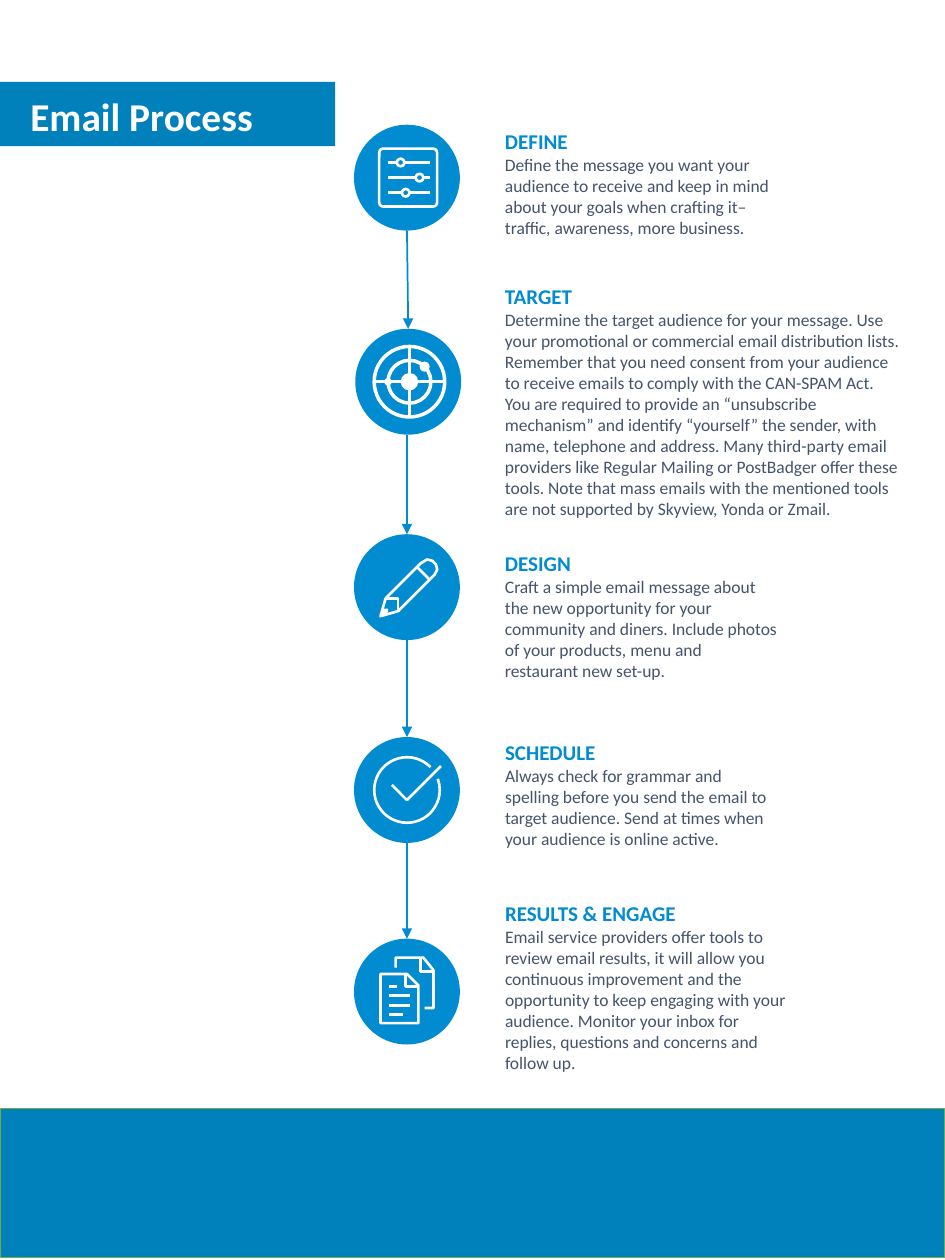
"""Build a one-page email process infographic with five linked steps."""
import pptx
import pptx.dml.color
import pptx.enum.shapes
import pptx.enum.text
import pptx.oxml
import pptx.oxml.ns
import pptx.util

Inches = pptx.util.Inches
Pt = pptx.util.Pt
SHAPES = pptx.enum.shapes.MSO_SHAPE
FONT = "Calibri"
BAND, BLUE, WHITE, SLATE, GREEN = "0081BC", "018BD1", "FFFFFF", "44546A", "70AD47"
DIAMETER = 0.84
CENTER_X = 3.23
TEXT_LEFT = 3.91

STEPS = [
    {"center": (CENTER_X, 1.41), "box": (0.97, 2.44, 0.98), "icon": "sliders", "heading": "DEFINE",
     "body": "Define the message you want your audience to receive and keep in mind about your goals "
             "when crafting it– traffic, awareness, more business."},
    {"center": (3.24, 3.03), "box": (2.2, 3.34, 1.99), "icon": "radar", "heading": "TARGET",
     "body": "Determine the target audience for your message. Use your promotional or commercial email "
             "distribution lists. Remember that you need consent from your audience to receive emails to "
             "comply with the CAN-SPAM Act. You are required to provide an “unsubscribe mechanism” and "
             "identify “yourself” the sender, with name, telephone and address. Many third-party email "
             "providers like Regular Mailing or PostBadger offer these tools. Note that mass emails with "
             "the mentioned tools are not supported by Skyview, Yonda or Zmail."},
    {"center": (CENTER_X, 4.66), "box": (4.32, 2.37, 1.14), "icon": "pencil", "heading": "DESIGN",
     "body": "Craft a simple email message about the new opportunity for your community and diners. "
             "Include photos of your products, menu and restaurant new set-up."},
    {"center": (CENTER_X, 6.27), "box": (5.82, 2.35, 0.98), "icon": "check", "heading": "SCHEDULE",
     "body": "Always check for grammar and spelling before you send the email to target audience. "
             "Send at times when your audience is online active."},
    {"center": (CENTER_X, 7.87), "box": (7.1, 2.49, 1.31), "icon": "pages", "heading": "RESULTS & ENGAGE",
     "body": "Email service providers offer tools to review email results, it will allow you continuous "
             "improvement and the opportunity to keep engaging with your audience. Monitor your inbox for "
             "replies, questions and concerns and follow up."},
]

ICONS = {
    "sliders": {
        "strokes": [[(-0.15, y), (0.18, y)] for y in (-0.12, 0, 0.12)],
        "rounds": [("frame", (0.01, 0), 0.23), ("knob", (-0.05, -0.12), 0.03),
                   ("knob", (0.1, 0), 0.03), ("knob", (-0.01, 0.12), 0.03)]},
    "radar": {
        "strokes": [[(-0.27, 0), (0.29, 0)], [(0.01, -0.28), (0.01, 0.28)]],
        "rounds": [("ring", (0.01, 0), 0.28), ("ring", (0.01, 0), 0.17), ("dot", (0.01, 0), 0.07),
                   ("dot", (0.13, -0.12), 0.04), ("dot", (-0.16, 0), 0.03)]},
    "pencil": {
        "strokes": [[(-0.21, 0.23), (-0.17, 0.09), (0.11, -0.19), (0.16, -0.22), (0.2, -0.21),
                     (0.23, -0.18), (0.24, -0.14), (0.22, -0.1), (-0.07, 0.19), (-0.21, 0.23)],
                    [(0.08, -0.16), (0.18, -0.06)],
                    [(-0.17, 0.09), (-0.07, 0.09), (-0.07, 0.19)]],
        "solid": [(-0.22, 0.24), (-0.18, 0.17), (-0.15, 0.17), (-0.15, 0.2), (-0.22, 0.24)]},
    "check": {
        "strokes": [[(-0.12, -0.04), (0, 0.08), (0.27, -0.19)]],
        "rounds": [("dial", (0, 0), 0.26)]},
    "pages": {
        "strokes": [[(-0.21, -0.14), (0, -0.14), (0.09, -0.05), (0.09, 0.25), (-0.21, 0.25), (-0.21, -0.14)],
                    [(-0.01, -0.14), (-0.01, -0.04), (0.08, -0.04)],
                    [(-0.09, -0.19), (-0.09, -0.27), (0.13, -0.27), (0.21, -0.17), (0.21, 0.13), (0.14, 0.13)],
                    [(0.11, -0.26), (0.11, -0.16), (0.2, -0.16)]]
        + [[(-0.14, y), (right, y)]
           for y, right in ((-0.04, -0.08), (0.03, 0.02), (0.11, 0.02), (0.18, -0.03))]},
}
ROUNDS = {
    "frame": (SHAPES.ROUNDED_RECTANGLE, None, WHITE, 1.5, (0.07,)),
    "knob": (SHAPES.OVAL, BLUE, WHITE, 1.5, ()),
    "ring": (SHAPES.OVAL, None, WHITE, 2, ()),
    "dot": (SHAPES.OVAL, WHITE, None, 0, ()),
    "dial": (SHAPES.ARC, None, WHITE, 1.5, (340 * 0.6, 316 * 0.6)),
    "disc": (SHAPES.OVAL, BLUE, None, 0, ()),
}


def color(value):
    return pptx.dml.color.RGBColor.from_string(value)


def style(shape, fill=None, line=None, width=1.5):
    shape.shadow.inherit = False
    if fill:
        shape.fill.solid()
        shape.fill.fore_color.rgb = color(fill)
    else:
        shape.fill.background()
    if line:
        shape.line.color.rgb = color(line)
        shape.line.width = Pt(width)
    else:
        shape.line.fill.background()


def add_round(page, kind, center, radius):
    preset, fill, line, width, adjustments = ROUNDS[kind]
    corner = [Inches(c - radius) for c in center]
    shape = page.shapes.add_shape(preset, *corner, Inches(2 * radius), Inches(2 * radius))
    style(shape, fill, line, width)
    for index, value in enumerate(adjustments):
        shape.adjustments[index] = value


def add_arrow(page, start, end):
    ends = [Inches(v) for v in (*start, *end)]
    arrow = page.shapes.add_connector(pptx.enum.shapes.MSO_CONNECTOR.STRAIGHT, *ends)
    arrow.line.color.rgb = color(BLUE)
    arrow.line.width = Pt(1)
    space = pptx.oxml.ns.nsdecls("a")
    head = pptx.oxml.parse_xml(f'<a:tailEnd {space} type="triangle"/>')
    arrow.line._get_or_add_ln().append(head)
    arrow._element.spPr.append(pptx.oxml.parse_xml(f"<a:effectLst {space}/>"))


def add_outline(page, center, contours, **look):
    placed = [[(Inches(center[0] + x), Inches(center[1] + y)) for x, y in points] for points in contours]
    builder = page.shapes.build_freeform(*placed[0][0])
    for index, points in enumerate(placed):
        if index:
            builder.move_to(*points[0])
        builder.add_line_segments(points[1:], close=contours[index][0] == contours[index][-1])
    style(builder.convert_to_shape(), **look)


def add_icon(page, icon, center):
    add_outline(page, center, icon["strokes"], line=WHITE)
    if "solid" in icon:
        add_outline(page, center, [icon["solid"]], fill=WHITE)
    for kind, (x, y), radius in icon.get("rounds", []):
        add_round(page, kind, (center[0] + x, center[1] + y), radius)


def set_font(para, size, shade, bold):
    para.font.name = FONT
    para.font.size = Pt(size)
    para.font.bold = bold
    para.font.color.rgb = color(shade)


def add_text(page, step):
    top, width, height = step["box"]
    box = page.shapes.add_textbox(Inches(TEXT_LEFT), Inches(top), Inches(width), Inches(height))
    frame = box.text_frame
    frame.word_wrap = True
    frame.auto_size = pptx.enum.text.MSO_AUTO_SIZE.SHAPE_TO_FIT_TEXT
    frame.text = step["heading"] + "\n" + step["body"]
    set_font(frame.paragraphs[0], 12, BLUE, True)
    set_font(frame.paragraphs[1], 10, SLATE, False)


def add_title(page, text):
    title = page.shapes.title
    title.left, title.top, title.width, title.height = map(Inches, (0, 0.65, 2.66, 0.51))
    title.fill.solid()
    title.fill.fore_color.rgb = color(BAND)
    frame = title.text_frame
    frame.text = text
    frame.auto_size = pptx.enum.text.MSO_AUTO_SIZE.NONE
    frame.vertical_anchor = pptx.enum.text.MSO_ANCHOR.BOTTOM
    frame.margin_left = Inches(0.24)
    para = frame.paragraphs[0]
    para.alignment = pptx.enum.text.PP_ALIGN.LEFT
    para.line_spacing = 0.9
    set_font(para, 22.5, WHITE, True)


def main():
    deck = pptx.Presentation()
    deck.slide_width, deck.slide_height = Inches(7.5), Inches(10)
    page = deck.slides.add_slide(deck.slide_layouts[5])
    add_title(page, "Email Process")
    footer = page.shapes.add_shape(SHAPES.RECTANGLE, 0, Inches(8.8), Inches(7.5), Inches(1.18))
    style(footer, BAND, GREEN, 0.5)
    radius = DIAMETER / 2
    for step, following in zip(STEPS, STEPS[1:]):
        end_x = following["center"][0]
        add_arrow(page, (CENTER_X, step["center"][1] + radius), (end_x, following["center"][1] - radius))
    for step in STEPS:
        add_round(page, "disc", step["center"], radius)
        add_icon(page, ICONS[step["icon"]], step["center"])
        add_text(page, step)
    deck.save("out.pptx")


if __name__ == "__main__":
    main()
